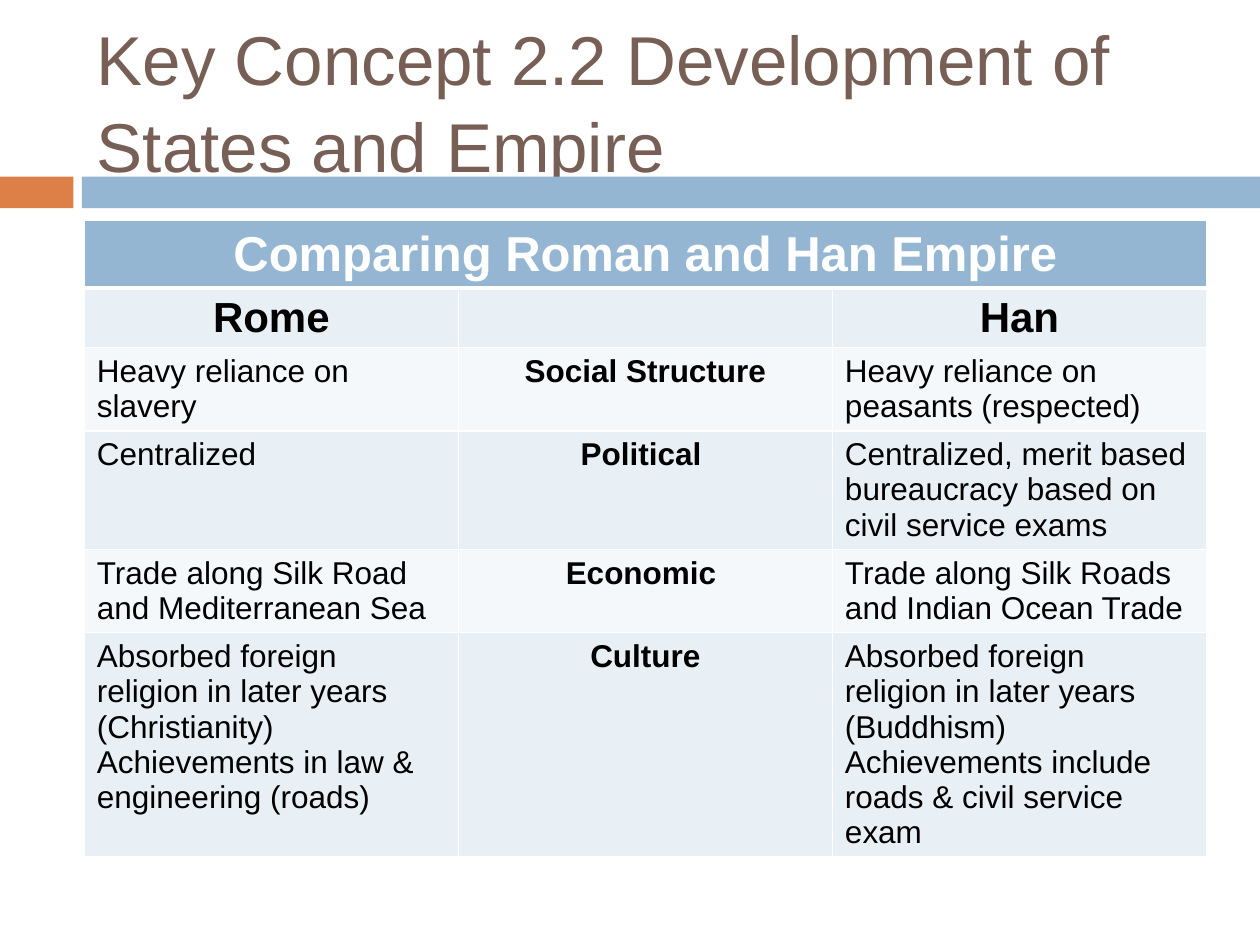
from lxml.etree import SubElement
from pptx import Presentation
from pptx.dml.color import RGBColor
from pptx.enum.shapes import MSO_SHAPE
from pptx.enum.text import MSO_ANCHOR, MSO_AUTO_SIZE, PP_ALIGN
from pptx.oxml.ns import qn
from pptx.util import Cm, Pt

COLORS = {"orange": "DD8047", "blue": "94B6D2", "brown": "775F55", "white": "FFFFFF",
          "black": "000000", "dark_band": "E9F0F5", "light_band": "F5F8FA"}


def write(tf, lines, color, align=PP_ALIGN.LEFT, **font):
    for i, line in enumerate(lines):
        p = tf.paragraphs[0] if i == 0 else tf.add_paragraph()
        p.alignment = align
        r = p.add_run()
        r.text = line
        r.font.color.rgb = RGBColor.from_string(COLORS[color])
        for name, value in {"name": "Arial", **font}.items():
            setattr(r.font, name, value)


def set_cell(cell, fill, bottom=1):
    tcPr = cell._tc.get_or_add_tcPr()
    for side, width in {"lnL": 1, "lnR": 1, "lnT": 1, "lnB": bottom}.items():
        ln = SubElement(tcPr, qn(f"a:{side}"), w=str(Pt(width)))
        SubElement(SubElement(ln, qn("a:solidFill")), qn("a:srgbClr"), val=COLORS["white"])
    cell.fill.solid()
    cell.fill.fore_color.rgb = RGBColor.from_string(COLORS[fill])


prs = Presentation()
prs.slide_width, prs.slide_height = Cm(25.4), Cm(19.05)
s = prs.slides.add_slide(prs.slide_layouts[5])

# Title
title = s.shapes.title
box = {"left": 1.7, "top": 0.64, "width": 22.66, "height": 2.74}
for name, value in box.items():
    setattr(title, name, Cm(value))
tf = title.text_frame
tf.word_wrap = True
tf.auto_size = MSO_AUTO_SIZE.NONE
tf.vertical_anchor = MSO_ANCHOR.MIDDLE
write(tf, ["Key Concept 2.2 Development of States and Empire"], "brown", size=Pt(39.5))
tf.paragraphs[0].line_spacing = 1.04

# Bars under the title
for left, width, color in [(0, 1.48, "orange"), (1.65, 23.75, "blue")]:
    sp = s.shapes.add_shape(MSO_SHAPE.RECTANGLE, Cm(left), Cm(3.56), Cm(width), Cm(0.64))
    sp.shadow.inherit = False
    sp.fill.solid()
    sp.fill.fore_color.rgb = RGBColor.from_string(COLORS[color])
    sp.line.fill.background()

# Comparison table: Rome, topic, Han
rows = [
    (["Heavy reliance on slavery"], "Social Structure",
     ["Heavy reliance on peasants (respected)"]),
    (["Centralized"], "Political ",
     ["Centralized, merit based bureaucracy based on civil service exams"]),
    (["Trade along Silk Road and Mediterranean Sea"], "Economic ",
     ["Trade along Silk Roads and Indian Ocean Trade"]),
    (["Absorbed foreign religion in later years (Christianity)",
      "Achievements in law & engineering (roads)"], "Culture",
     ["Absorbed foreign religion in later years (Buddhism)",
      "Achievements include roads & civil service exam"]),
]
heights = [1.3, 1.18, 1.68, 2.38, 1.68, 4.5]
table = s.shapes.add_table(len(heights), 3, Cm(1.7), Cm(4.45),
                           Cm(22.62), Cm(sum(heights))).table
for row, height in zip(table.rows, heights):
    row.height = Cm(height)
for col in table.columns:
    col.width = Cm(7.54)

# Fills and borders
for i, row in enumerate(table.rows):
    for cell in row.cells:
        if i == 0:
            set_cell(cell, "blue", bottom=3)
        else:
            set_cell(cell, "dark_band" if i % 2 else "light_band")

# Header rows
table.cell(0, 0).merge(table.cell(0, 2))
for i, j, text, size, color in [(0, 0, "Comparing Roman and Han Empire", 28, "white"),
                                (1, 0, "Rome", 24, "black"), (1, 2, "Han", 24, "black")]:
    write(table.cell(i, j).text_frame, [text], color, PP_ALIGN.CENTER, size=Pt(size), bold=True)

# Body rows
for i, (rome, topic, han) in enumerate(rows, start=2):
    for j, lines in [(0, rome), (2, han)]:
        write(table.cell(i, j).text_frame, lines, "black", size=Pt(18), bold=False)
    write(table.cell(i, 1).text_frame, [topic], "black", PP_ALIGN.CENTER, size=Pt(18), bold=True)

prs.save("out.pptx")
